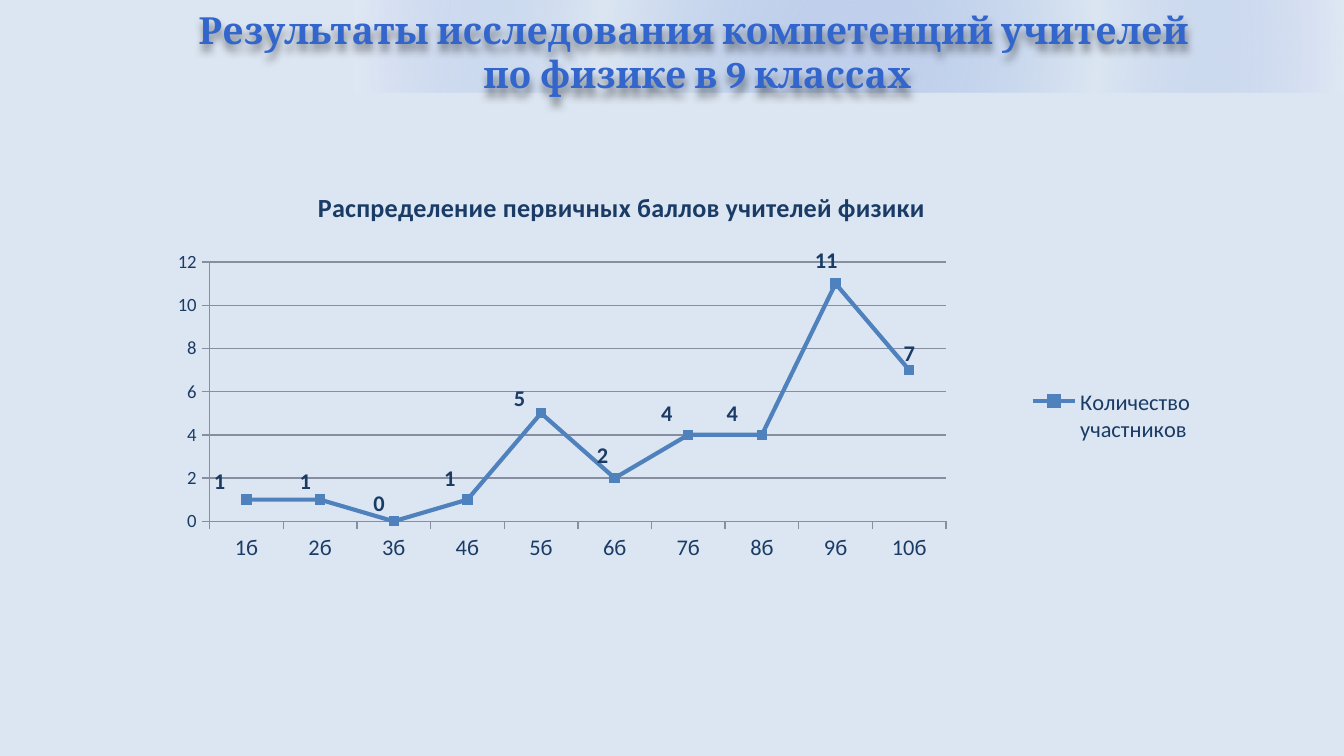
from lxml import etree
from pptx import Presentation
from pptx.chart.data import CategoryChartData
from pptx.dml.color import RGBColor
from pptx.enum import chart as ch, shapes, text
from pptx.oxml import parse_xml
from pptx.oxml.ns import nsdecls, qn
from pptx.util import Inches, Pt

BACKGROUND = RGBColor(0xDC, 0xE6, 0xF2)
HEADING = RGBColor(0x33, 0x66, 0xCC)
NAVY = RGBColor(0x19, 0x3B, 0x65)
BLUE = RGBColor(0x4F, 0x81, 0xBD)
GRID = RGBColor(0x86, 0x8E, 0x9F)
CHART_W, CHART_H = 8.13, 3.08


def manual_layout(x, y, w=None, h=None, edge=True, inner=False):
    """Chart layout element, from inches within the chart."""
    values = {"layoutTarget": "inner"} if inner else {}
    if edge:
        values.update(xMode="edge", yMode="edge")
    values.update(x=x / CHART_W, y=y / CHART_H)
    if w:
        values.update(w=w / CHART_W, h=h / CHART_H)
    layout = etree.Element(qn("c:layout"))
    manual = etree.SubElement(layout, qn("c:manualLayout"))
    for tag, value in values.items():
        etree.SubElement(manual, qn(f"c:{tag}")).set("val", str(value))
    return layout


def set_font(font, size, bold=False, color=NAVY, name="Calibri"):
    font.name, font.size, font.bold = name, Pt(size), bold
    font.color.rgb = color


prs = Presentation()
prs.slide_width, prs.slide_height = Inches(10), Inches(5.625)
slide = prs.slides.add_slide(prs.slide_layouts[5])
slide.background.fill.solid()
slide.background.fill.fore_color.rgb = BACKGROUND

# Gradient band behind the heading
band = slide.shapes.add_shape(
    shapes.MSO_SHAPE.RECTANGLE, Inches(2.64), 0, Inches(7.36), Inches(0.69))
band.shadow.inherit = False
band.line.fill.background()
band_gradient = parse_xml(
    f'<a:gradFill {nsdecls("a")} rotWithShape="1"><a:gsLst>'
    '<a:gs pos="0"><a:srgbClr val="C2D1ED"/></a:gs>'
    '<a:gs pos="50000"><a:srgbClr val="9AB5E4"><a:alpha val="0"/></a:srgbClr></a:gs>'
    '<a:gs pos="100000"><a:srgbClr val="E1E8F5"/></a:gs></a:gsLst>'
    '<a:path path="circle"><a:fillToRect l="50000" t="50000" r="50000" b="50000"/>'
    '</a:path></a:gradFill>')
band._element.spPr.find(qn("a:prstGeom")).addnext(band_gradient)

# Distribution chart
scores = CategoryChartData()
scores.categories = [f"{score}б" for score in range(1, 11)]
scores.add_series("Количество участников", [1, 1, 0, 1, 5, 2, 4, 4, 11, 7])
chart = slide.shapes.add_chart(
    ch.XL_CHART_TYPE.LINE_MARKERS, Inches(1.02), Inches(1.25),
    Inches(CHART_W), Inches(CHART_H), scores).chart
set_font(chart.font, 10)

chart.has_title = True
chart.chart_title.text_frame.text = "Распределение первичных баллов учителей физики"
set_font(chart.chart_title.text_frame.paragraphs[0].runs[0].font, 14, True)
chart_title = chart.chart_title._element
for layout in chart_title.findall(qn("c:layout")):
    chart_title.remove(layout)
chart_title.find(qn("c:tx")).addnext(manual_layout(1.31, 0.12))
chart.chart_title.include_in_layout = False

chart.has_legend = True
chart.legend.position = ch.XL_LEGEND_POSITION.RIGHT
chart.legend.include_in_layout = False
set_font(chart.legend.font, 12)
legend = chart.legend._element
for layout in legend.findall(qn("c:layout")):
    legend.remove(layout)
legend.find(qn("c:legendPos")).addnext(manual_layout(6.5, 1.6, 1.5, 0.5))

# Axes and plot area
for axis, size in ((chart.category_axis, 12), (chart.value_axis, 10)):
    axis.major_tick_mark = ch.XL_TICK_MARK.OUTSIDE
    axis.minor_tick_mark = ch.XL_TICK_MARK.NONE
    axis.format.line.color.rgb = GRID
    set_font(axis.tick_labels.font, size)
chart.category_axis.has_major_gridlines = False
chart.value_axis.minimum_scale, chart.value_axis.maximum_scale = 0, 12
chart.value_axis.major_unit = 2
chart.value_axis.has_major_gridlines = True
chart.value_axis.major_gridlines.format.line.color.rgb = GRID

plot_area = chart._chartSpace.chart.plotArea
for layout in plot_area.findall(qn("c:layout")):
    plot_area.remove(layout)
plot_area.insert(0, manual_layout(0.54, 0.7, 5.48, 1.93, inner=True))

# Line with markers
chart.plots[0].vary_by_categories = False
participants = chart.plots[0].series[0]
participants.smooth = False
participants.format.line.color.rgb = BLUE
participants.format.line.width = Pt(2.25)
participants.marker.style = ch.XL_MARKER_STYLE.SQUARE
participants.marker.size = 5
participants.marker.format.fill.solid()
participants.marker.format.fill.fore_color.rgb = BLUE
participants.marker.format.line.color.rgb = BLUE

# Value labels, shifted in inches from their place above the points
participants.data_labels.show_value = True
set_font(participants.data_labels.font, 12, True)
shifts = [(-0.2, 0.04), (-0.11, 0.04), (-0.11, 0.04), (-0.13, 0.02), (-0.16, 0.07),
          (-0.09, 0.01), (-0.16, 0.02), (-0.22, 0.02), (-0.07, 0), (0, 0.05)]
for index in range(len(shifts)):
    label = participants.points[index].data_label
    set_font(label.font, 12, True)
    label.position = ch.XL_LABEL_POSITION.ABOVE
for label_xml, (dx, dy) in zip(participants._element.iter(qn("c:dLbl")), shifts):
    label_xml.find(qn("c:idx")).addnext(manual_layout(dx, dy, edge=False))
for leader_lines in participants._element.iter(qn("c:showLeaderLines")):
    leader_lines.set("val", "0")

# Heading with a soft shadow, in front of the band
heading = slide.shapes.title
heading.left, heading.top = Inches(1.25), 0
heading.width, heading.height = Inches(7.88), Inches(0.77)
heading.fill.background()
heading._element.spPr.append(parse_xml(
    f'<a:effectLst {nsdecls("a")}><a:outerShdw blurRad="50800" dist="50800" '
    'dir="5400000" algn="t" rotWithShape="0"><a:srgbClr val="000000">'
    '<a:alpha val="43000"/></a:srgbClr></a:outerShdw></a:effectLst>'))
slide.shapes._spTree.append(heading._element)
frame = heading.text_frame
frame.text = "Результаты исследования компетенций учителей \nпо физике в 9 классах"
frame.word_wrap = True
frame.auto_size = text.MSO_AUTO_SIZE.SHAPE_TO_FIT_TEXT
frame.vertical_anchor = text.MSO_ANCHOR.TOP
for line in frame.paragraphs:
    line.alignment = text.PP_ALIGN.CENTER
    line.line_spacing = 1.0
    set_font(line.runs[0].font, 20, True, HEADING, "Cambria")

prs.save("out.pptx")
